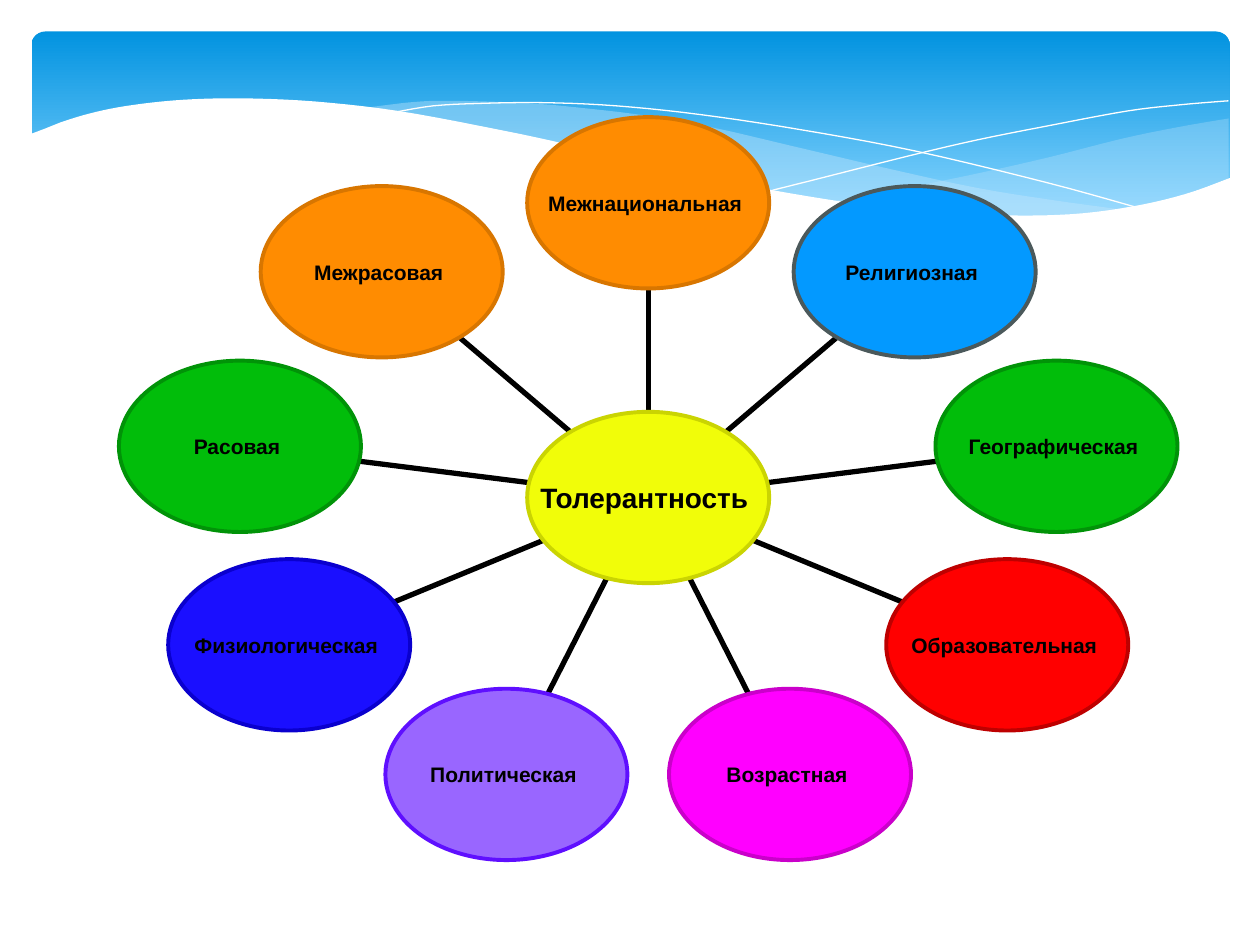
import math

import lxml.etree
import pptx
import pptx.dml.color
import pptx.enum.shapes
import pptx.enum.text
import pptx.oxml.ns
import pptx.util

Pt = pptx.util.Pt
RGB = pptx.dml.color.RGBColor
SHAPE = pptx.enum.shapes.MSO_SHAPE

BLACK = RGB(0x00, 0x00, 0x00)
WHITE = RGB(0xFF, 0xFF, 0xFF)
PALE = RGB(0xC6, 0xE7, 0xFC)
SKY = RGB(0x02, 0x93, 0xE0)
MIST = RGB(0x83, 0xD3, 0xFE)
ORANGE = RGB(0xFF, 0x8C, 0x01)
AMBER = RGB(0xD8, 0x76, 0x00)
BLUE = RGB(0x03, 0x99, 0xFF)
SLATE = RGB(0x4B, 0x59, 0x5B)
GREEN = RGB(0x01, 0xBD, 0x0A)
MOSS = RGB(0x01, 0x93, 0x08)
RED = RGB(0xFF, 0x00, 0x00)
BRICK = RGB(0xBE, 0x00, 0x00)
PINK = RGB(0xFF, 0x00, 0xFF)
PLUM = RGB(0xCA, 0x00, 0xCA)
LILAC = RGB(0x99, 0x66, 0xFF)
PURPLE = RGB(0x5F, 0x0F, 0xFF)
NAVY = RGB(0x1A, 0x0F, 0xFF)
INK = RGB(0x0A, 0x00, 0xCE)
YELLOW = RGB(0xF1, 0xFD, 0x09)
OLIVE = RGB(0xCA, 0xD4, 0x02)

MID_X, MID_Y = 370.4, 284.3
RING_X, RING_Y = 236.9, 168.4
HALF_X, HALF_Y = 69.15, 48.95

KINDS = [
    ("Межнациональная ", ORANGE, AMBER),
    ("Религиозная ", BLUE, SLATE),
    ("Географическая ", GREEN, MOSS),
    ("Образовательная ", RED, BRICK),
    ("Возрастная ", PINK, PLUM),
    ("Политическая ", LILAC, PURPLE),
    ("Физиологическая ", NAVY, INK),
    ("Расовая ", GREEN, MOSS),
    ("Межрасовая ", ORANGE, AMBER),
]

RIGHT_WAVE = [
    [(702, 67.7), (673, 72.7), (641.5, 79.2), (599, 90), (561, 98.6),
     (525, 106), (476, 115)],
    [(476, 115), (507.6, 118.8), (545, 122.4), (578, 123.8), (615, 122.4),
     (646, 118.8), (673, 112.3), (702, 102)],
]
LONG_WAVE = [
    [(643, 120), (602.6, 114.5), (558, 107.3), (508.3, 96.5), (453, 83.5),
     (409.7, 73.4), (370, 66.2), (334.8, 61.9), (302.4, 59), (260, 57.6),
     (236, 58.3), (206, 62)],
    [(206, 62), (246, 67.7), (291, 76.3), (323, 83.5), (381.6, 97.2),
     (432.7, 108), (478.8, 116), (520, 121), (565, 123.8), (596, 124.6),
     (624, 122.4), (643, 120)],
]
LONG_ARC = [
    [(222.5, 64.8), (247.7, 60.5), (278.6, 59), (311.8, 58.7), (352, 60.5),
     (400.3, 65.5), (458, 74.2), (523.4, 86.4), (598.3, 104.4), (653, 119.5)],
]
RIGHT_ARC = [
    [(441.4, 108.7), (470.2, 101.5), (518.4, 89.3), (558.7, 79.9),
     (602, 71.3), (644.4, 63.4), (675.4, 59.8), (702, 57.6)],
]
WHITE_WAVE = [
    [(16.5, 77), (26, 73.4), (37.4, 69), (54.7, 64), (76, 60), (105, 57),
     (139, 56.2), (180, 58), (227.5, 63.4), (281.5, 73.4), (322, 82),
     (362, 92), (400, 100), (434, 107.3), (481, 115.2), (523, 120.2),
     (571, 123), (612, 122.4), (647, 118), (677, 111), (703.4, 101.5)],
    [(703.4, 161), (16.5, 161)],
]


def smooth(knots, steps=5):
    if len(knots) < 3:
        return knots
    ends = [knots[0]] + knots + [knots[-1]]
    dots = []
    for a, b, c, d in zip(ends, ends[1:], ends[2:], ends[3:]):
        for step in range(steps):
            t = step / steps
            dots.append(tuple(
                q + t * (r - p) / 2 + t * t * (2 * p - 5 * q + 4 * r - s) / 2
                + t ** 3 * (3 * q - p - 3 * r + s) / 2
                for p, q, r, s in zip(a, b, c, d)))
    return dots + [knots[-1]]


def add_curve(slide, edges, close):
    dots = [(Pt(x), Pt(y)) for edge in edges for x, y in smooth(edge)]
    pen = slide.shapes.build_freeform(*dots[0])
    pen.add_line_segments(dots[1:], close=close)
    curve = pen.convert_to_shape()
    curve.shadow.inherit = False
    return curve


def add_wave(slide, edges, hue, alpha=100):
    wave = add_curve(slide, edges, True)
    wave.line.fill.background()
    wave.fill.solid()
    wave.fill.fore_color.rgb = hue
    if alpha < 100:
        qn = pptx.oxml.ns.qn
        tint = wave.fill._xPr.find(qn("a:solidFill")).find(qn("a:srgbClr"))
        lxml.etree.SubElement(tint, qn("a:alpha"), val=str(alpha * 1000))


def add_arc(slide, edges):
    arc = add_curve(slide, edges, False)
    arc.fill.background()
    arc.line.color.rgb = WHITE
    arc.line.width = Pt(0)


def add_band(slide):
    band = slide.shapes.add_shape(
        SHAPE.ROUNDED_RECTANGLE, Pt(18), Pt(18), Pt(684.7), Pt(112.3))
    band.adjustments[0] = 0.07
    band.shadow.inherit = False
    band.line.fill.background()
    band.fill.gradient()
    band.fill.gradient_angle = 270
    for stop, hue, place in zip(band.fill.gradient_stops, (SKY, MIST), (0, 0.9)):
        stop.color.rgb = hue
        stop.position = place


def add_oval(slide, x, y, text, hue, edge, size):
    oval = slide.shapes.add_shape(
        SHAPE.OVAL, Pt(x - HALF_X), Pt(y - HALF_Y), Pt(2 * HALF_X), Pt(2 * HALF_Y))
    oval.shadow.inherit = False
    oval.fill.solid()
    oval.fill.fore_color.rgb = hue
    oval.line.color.rgb = edge
    oval.line.width = Pt(2.25)
    frame = oval.text_frame
    frame.margin_left = frame.margin_right = Pt(0)
    frame.margin_top = frame.margin_bottom = Pt(0)
    frame.word_wrap = False
    frame.vertical_anchor = pptx.enum.text.MSO_ANCHOR.MIDDLE
    frame.text = text
    line = frame.paragraphs[0]
    line.alignment = pptx.enum.text.PP_ALIGN.CENTER
    font = line.runs[0].font
    font.name = "Arial"
    font.size = Pt(size)
    font.bold = True
    font.color.rgb = BLACK


def add_spoke(slide, x1, y1, x2, y2):
    spoke = slide.shapes.add_connector(
        pptx.enum.shapes.MSO_CONNECTOR.STRAIGHT, Pt(x1), Pt(y1), Pt(x2), Pt(y2))
    spoke.line.color.rgb = BLACK
    spoke.line.width = Pt(3)
    lxml.etree.SubElement(
        spoke._element.spPr, pptx.oxml.ns.qn("a:effectLst"))


def main():
    deck = pptx.Presentation()
    deck.slide_width, deck.slide_height = Pt(720), Pt(540)
    slide = deck.slides.add_slide(deck.slide_layouts[6])
    add_band(slide)
    add_wave(slide, RIGHT_WAVE, PALE, 29)
    add_wave(slide, LONG_WAVE, PALE, 40)
    add_arc(slide, LONG_ARC)
    add_arc(slide, RIGHT_ARC)
    add_wave(slide, WHITE_WAVE, WHITE)
    for i, (text, hue, edge) in enumerate(KINDS):
        turn = math.tau * i / len(KINDS)
        dx, dy = math.sin(turn), -math.cos(turn)
        x, y = MID_X + RING_X * dx, MID_Y + RING_Y * dy
        add_spoke(slide, MID_X + HALF_X * dx, MID_Y + HALF_Y * dy,
                  x - HALF_X * dx, y - HALF_Y * dy)
        add_oval(slide, x, y, text, hue, edge, 12)
    add_oval(slide, MID_X, MID_Y, "Толерантность ", YELLOW, OLIVE, 16)
    deck.save("out.pptx")


if __name__ == "__main__":
    main()
